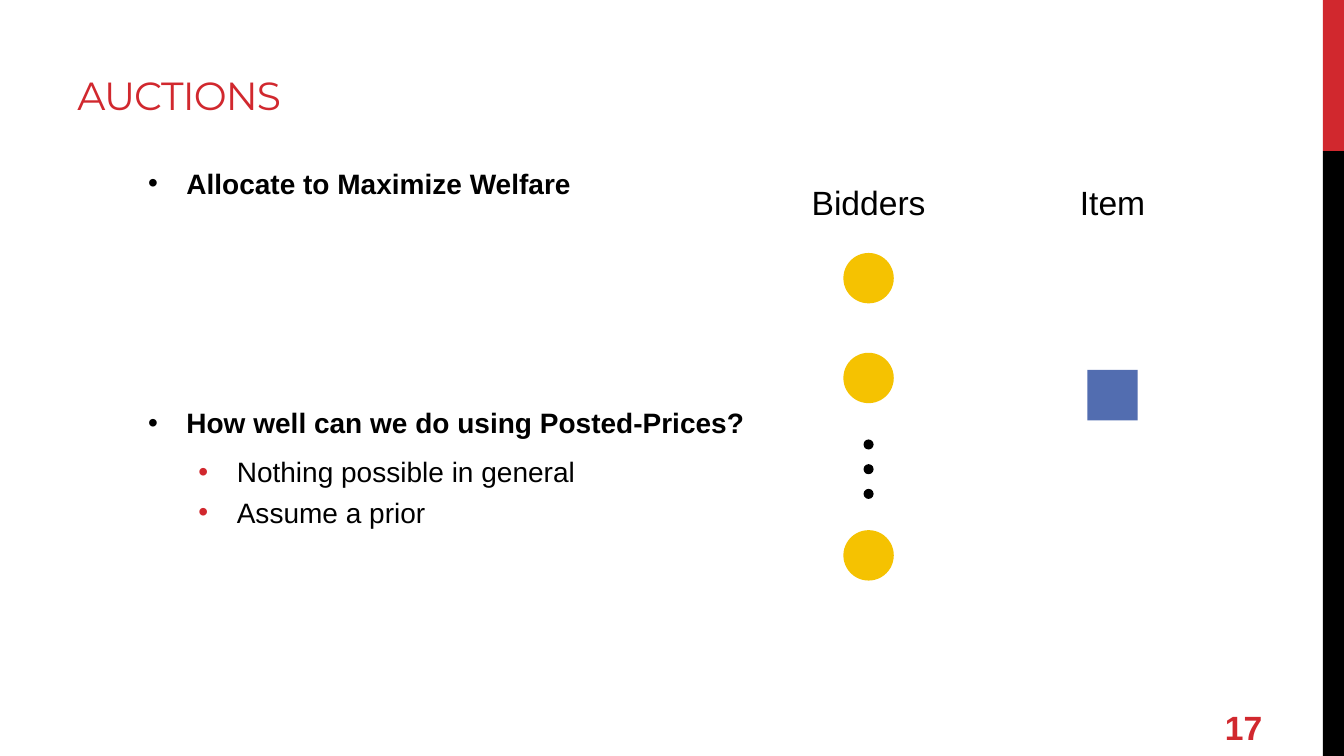
import pptx
import pptx.util
import pptx.dml.color
import pptx.enum.shapes
import pptx.enum.text
import pptx.oxml
import pptx.oxml.ns

Inches = pptx.util.Inches
Pt = pptx.util.Pt
RGBColor = pptx.dml.color.RGBColor
MSO_SHAPE = pptx.enum.shapes.MSO_SHAPE
MSO_ANCHOR = pptx.enum.text.MSO_ANCHOR
PP_ALIGN = pptx.enum.text.PP_ALIGN

RED = RGBColor(0xD1, 0x28, 0x2E)
BLACK = RGBColor(0x00, 0x00, 0x00)
GOLD = RGBColor(0xF5, 0xC2, 0x01)
BLUE = RGBColor(0x52, 0x6D, 0xB0)


def write(p, text, size=20, font="Arial", color=BLACK, bold=False, spacing=None):
    """Add a formatted run to a paragraph."""
    r = p.add_run()
    r.text = text
    r.font.size = Pt(size)
    r.font.name = font
    r.font.color.rgb = color
    r.font.bold = bold
    if spacing is not None:
        r.font._element.set("spc", str(round(spacing * 100)))


def add_box(s, x, y, w, h, anchor=MSO_ANCHOR.TOP):
    """Add a wrapping text box and return its text frame."""
    tf = s.shapes.add_textbox(Inches(x), Inches(y), Inches(w), Inches(h)).text_frame
    tf.word_wrap = True
    tf.vertical_anchor = anchor
    return tf


def add_solid(shapes, kind, x, y, w, h, color):
    """Add a plain filled shape without outline."""
    sp = shapes.add_shape(kind, Inches(x), Inches(y), Inches(w), Inches(h))
    sp.shadow.inherit = False
    sp.fill.solid()
    sp.fill.fore_color.rgb = color
    sp.line.fill.background()


def add_bullet(p, indent, color):
    """Give a paragraph a hanging round bullet."""
    pPr = p._p.get_or_add_pPr()
    pPr.set("marL", str(Inches(indent)))
    pPr.set("indent", str(Inches(-0.38)))
    ns = pptx.oxml.ns.nsdecls("a")
    for xml in (
        f'<a:buClr {ns}><a:srgbClr val="{color}"/></a:buClr>',
        f'<a:buFont {ns} typeface="Arial"/>',
        f'<a:buChar {ns} char="•"/>',
    ):
        pPr.append(pptx.oxml.parse_xml(xml))


def add_side_band(s, x, y, w, h):
    """Draw the red and black band along the slide edge."""
    red_h = h / 5
    add_solid(s.shapes, MSO_SHAPE.RECTANGLE, x, y, w, red_h, RED)
    add_solid(s.shapes, MSO_SHAPE.RECTANGLE, x, y + red_h, w, h - red_h, BLACK)


def add_title(s, x, y, w, h):
    """Place the slide title."""
    tf = add_box(s, x, y, w, h, MSO_ANCHOR.BOTTOM)
    write(tf.paragraphs[0], "AUCTIONS", size=28, font="Montserrat", color=RED, spacing=-0.6)


def add_body(s, x, y, w, h):
    """Place the two-level bullet list."""
    tf = add_box(s, x, y, w, h)
    items = [
        ("Allocate to Maximize Welfare", 0, 5),
        ("How well can we do using Posted-Prices?", 0, 141),
        ("Nothing possible in general", 1, 5),
        ("Assume a prior", 1, 5),
    ]
    for i, (text, level, before) in enumerate(items):
        p = tf.add_paragraph() if i else tf.paragraphs[0]
        p.level = level
        p.space_before = Pt(before)
        p.space_after = Pt(0 if level else 6)
        add_bullet(p, 0.38 + 0.5 * level, RED if level else BLACK)
        write(p, text, bold=level == 0)


def add_market(s, x, y, w):
    """Draw the bidders and item columns with their headings."""
    column_w, node, dot = 1.67, 0.5, 0.1
    item_x = x + w - column_w
    for left, heading in ((x, "Bidders"), (item_x, "Item")):
        p = add_box(s, left, y, column_w, 0.5).paragraphs[0]
        p.alignment = PP_ALIGN.CENTER
        write(p, heading, size=24)

    center = x + column_w / 2
    for top in (0.75, 1.74, 3.5):
        add_solid(s.shapes, MSO_SHAPE.OVAL, center - node / 2, y + top, node, node, GOLD)
    dots = s.shapes.add_group_shape()
    for i in range(3):
        add_solid(dots.shapes, MSO_SHAPE.OVAL, center - dot / 2, y + 2.6 + 0.245 * i, dot, dot, BLACK)
    item_left = item_x + (column_w - node) / 2
    add_solid(s.shapes, MSO_SHAPE.RECTANGLE, item_left, y + 1.91, node, node, BLUE)


def add_page_number(s, x, y, w, h):
    """Place the page number."""
    tf = add_box(s, x, y, w, h, MSO_ANCHOR.MIDDLE)
    write(tf.paragraphs[0], "17", size=24, color=RED, bold=True)


def main():
    """Build the slide and save it."""
    prs = pptx.Presentation()
    prs.slide_width, prs.slide_height = Inches(13.33), Inches(7.5)
    s = prs.slides.add_slide(prs.slide_layouts[6])
    add_side_band(s, 13.12, 0, 0.21, 7.5)
    add_title(s, 0.67, 0.08, 10.86, 1.14)
    add_body(s, 1.37, 1.6, 6.42, 5.22)
    add_page_number(s, 12.05, 7.01, 1.22, 0.4)
    add_market(s, 7.78, 1.76, 4.09)
    prs.save("out.pptx")


if __name__ == "__main__":
    main()
